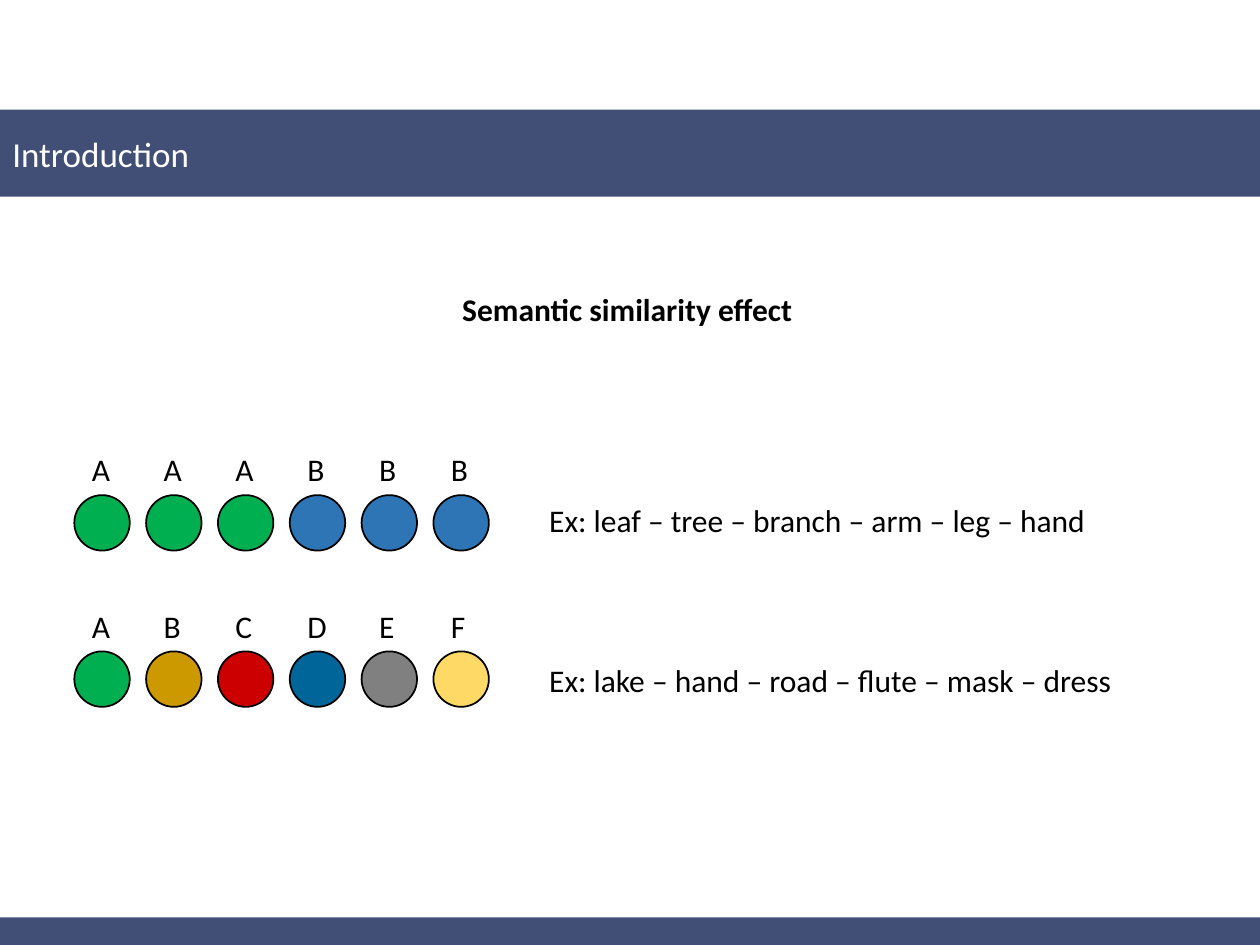
from pptx import Presentation
from pptx.dml.color import RGBColor
from pptx.enum import shapes, text
from pptx.util import Inches, Pt

NAVY, BLACK, WHITE = "414F77", "000000", "FFFFFF"
GREEN, BLUE = "00B050", "2E75B6"
TITLE = "Introduction"
HEADING = "Semantic similarity effect"
ROWS = [
    {"letters": "AAABBB", "colors": [GREEN] * 3 + [BLUE] * 3,
     "label_y": 3.52, "circle_y": 3.93,
     "example": "Ex: leaf – tree – branch – arm – leg – hand",
     "example_box": (4.26, 3.93, 4.52, 0.4)},
    {"letters": "ABCDEF",
     "colors": [GREEN, "CC9900", "CC0000", "006699", "808080", "FFD966"],
     "label_y": 4.77, "circle_y": 5.17,
     "example": "Ex: lake – hand – road – flute – mask – dress",
     "example_box": (4.26, 5.2, 4.78, 0.4)},
]
CIRCLE_X, LABEL_X, PITCH, DIAMETER = 0.59, 0.63, 0.57, 0.44
LABEL_W, LABEL_H = 0.35, 0.4


def rgb(value):
    return RGBColor.from_string(value)


def write(sp, content, size=18, color=BLACK, bold=False, wrap=False,
          anchor=text.MSO_ANCHOR.TOP):
    tf = sp.text_frame
    tf.word_wrap = wrap
    tf.vertical_anchor = anchor
    p = tf.paragraphs[0]
    p.alignment = text.PP_ALIGN.LEFT
    r = p.add_run()
    r.text = content
    r.font.name = "Calibri"
    r.font.size = Pt(size)
    r.font.bold = bold
    r.font.color.rgb = rgb(color)


def add_shape(parent, kind, box, fill, line=None):
    sp = parent.add_shape(kind, *map(Inches, box))
    sp.shadow.inherit = False
    sp.fill.solid()
    sp.fill.fore_color.rgb = rgb(fill)
    if line:
        sp.line.color.rgb = rgb(line)
        sp.line.width = Pt(1)
    else:
        sp.line.fill.background()
    return sp


def add_text(s, content, box, **fmt):
    write(s.shapes.add_textbox(*map(Inches, box)), content, **fmt)


def add_row(s, row):
    group = s.shapes.add_group_shape()
    for i, color in enumerate(row["colors"]):
        add_shape(group.shapes, shapes.MSO_SHAPE.OVAL,
                  (CIRCLE_X + i * PITCH, row["circle_y"], DIAMETER, DIAMETER),
                  color, BLACK)
    for i, letter in enumerate(row["letters"]):
        add_text(s, letter,
                 (LABEL_X + i * PITCH, row["label_y"], LABEL_W, LABEL_H))
    add_text(s, row["example"], row["example_box"])


def main():
    prs = Presentation()
    prs.slide_width, prs.slide_height = Inches(10), Inches(7.5)
    s = prs.slides.add_slide(prs.slide_layouts[6])
    rect = shapes.MSO_SHAPE.RECTANGLE
    add_shape(s.shapes, rect, (0, 7.28, 10, 0.22), NAVY)
    banner = add_shape(s.shapes, rect, (0, 0.87, 10, 0.69), NAVY)
    write(banner, TITLE, size=20, color=WHITE, wrap=True,
          anchor=text.MSO_ANCHOR.MIDDLE)
    for row in ROWS:
        add_row(s, row)
    add_text(s, HEADING, (3.57, 2.25, 2.85, 0.4), bold=True)
    prs.save("out.pptx")


if __name__ == "__main__":
    main()
